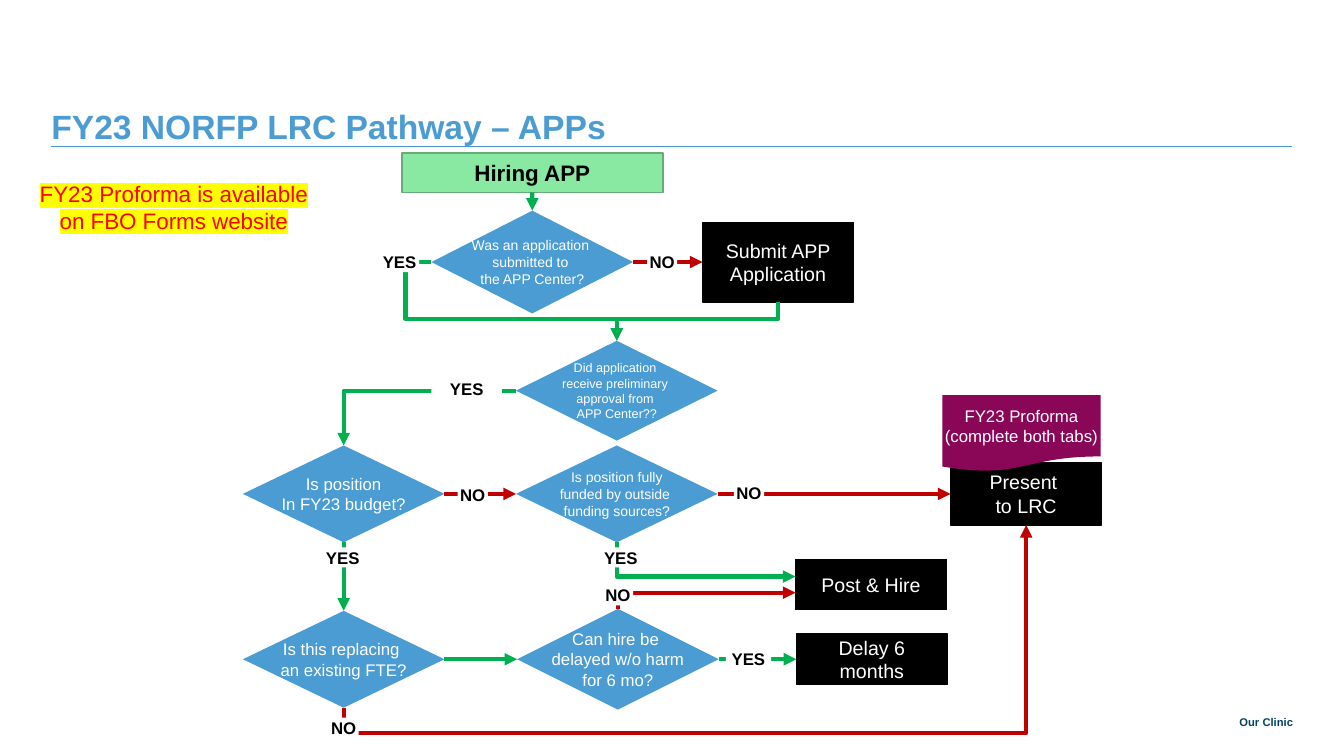
"""Build the APP hiring pathway flowchart slide."""
from dataclasses import dataclass

from lxml.etree import SubElement
from pptx import Presentation
from pptx.dml.color import RGBColor
from pptx.enum.shapes import MSO_CONNECTOR as Link, MSO_SHAPE as Shape
from pptx.enum.text import MSO_ANCHOR as Anchor, PP_ALIGN as Align
from pptx.oxml.ns import qn
from pptx.util import Pt


@dataclass(frozen=True)
class Theme:
    """Colours, font and type sizes."""
    font: str = "Arial"
    blue: str = "4B9CD3"
    navy: str = "004163"
    black: str = "000000"
    white: str = "FFFFFF"
    mint: str = "89E8A2"
    mint_edge: str = "65AC78"
    plum: str = "8A0758"
    yes: str = "00B050"
    no: str = "C00000"
    alert: str = "FF0000"
    marker: str = "FFFF00"
    title: int = 24
    heading: int = 16
    outcome: int = 14
    body: int = 12
    small: int = 10
    tiny: int = 9
    footer: int = 8


T = Theme()

TITLE = "FY23 NORFP LRC Pathway – APPs"
FOOTER = "Our Clinic"
NOTICE = "FY23 Proforma is available on FBO Forms website"
START = ("Hiring APP", (287, 109.4, 186.5, 28.1))
PROFORMA = ("FY23 Proforma\n(complete both tabs)", (673.2, 282.2, 113, 54.7))

DECISION_WIDTH, OUTCOME_WIDTH = 144, 108
DECISIONS = {
    "applied": ("Was an application \nsubmitted to \nthe APP Center?", 308.2, 150.5, 73.4, T.small),
    "approved": ("Did application \nreceive preliminary \napproval from \nAPP Center??", 368.6, 243.4, 71.3, T.tiny),
    "budgeted": ("Is position\nIn FY23 budget?", 173.5, 318.2, 69.2, T.body),
    "funded": ("Is position fully\nfunded by outside \nfunding sources?", 368.6, 318.2, 69.2, T.small),
    "replacing": ("Is this replacing \nan existing FTE?", 173.5, 436.3, 69.2, T.body),
    "delayable": ("Can hire be \ndelayed w/o harm\nfor 6 mo?", 369.4, 434.9, 72, T.body),
}
OUTCOMES = {
    "submit": ("Submit APP Application", 501.8, 158.7, 57),
    "present": ("Present \nto LRC", 679, 330.5, 44.6),
    "post": ("Post & Hire", 568.2, 399.6, 36),
    "delay": ("Delay 6 months", 568.8, 452.9, 36),
}

STRAIGHT = "line"
BEND_1, BEND_2, BEND_3 = (f"bentConnector{n}" for n in (2, 3, 4))
ROUTES = [
    ("start", "bottom", "applied", "top", T.yes, STRAIGHT, (), 0),
    ("applied", "right", "submit", "left", T.no, STRAIGHT, (), 0),
    ("submit", "bottom", "approved", "top", T.yes, BEND_2, (0.44,), 0),
    ("applied", "left", "approved", "top", T.yes, BEND_3, (-0.14, 0.72), 0),
    ("approved", "left", "budgeted", "top", T.yes, BEND_1, (), 0),
    ("budgeted", "right", "funded", "left", T.no, STRAIGHT, (), 0),
    ("budgeted", "bottom", "replacing", "top", T.yes, STRAIGHT, (), 0),
    ("replacing", "right", "delayable", "left", T.yes, STRAIGHT, (), 0),
    ("replacing", "bottom", "present", "bottom", T.no, BEND_2, (-0.14,), 0),
    ("funded", "right", "present", "left", T.no, STRAIGHT, (), 0),
    ("funded", "bottom", "post", "left", T.yes, BEND_1, (), -5.8),
    ("delayable", "top", "post", "left", T.no, BEND_1, (), 5.8),
    ("delayable", "right", "delay", "left", T.yes, STRAIGHT, (), 0),
]

ANSWER_HEIGHT = 14.4
ANSWERS = [
    ("YES", 271.4, 180, 28.1), ("NO", 462.2, 180, 21.6),
    ("YES", 308.2, 270.7, 50.4), ("NO", 326.9, 346.6, 21.6),
    ("NO", 524.2, 345, 21.6), ("YES", 219.6, 391, 50.4),
    ("YES", 429.1, 391, 28.8), ("NO", 430.6, 418, 21.6),
    ("YES", 518.4, 463.7, 32.4), ("NO", 234.7, 512.6, 21.6),
]

SIDES = {"left": (0, 0.5), "right": (1, 0.5), "top": (0.5, 0), "bottom": (0.5, 1)}


def write(shape, text, size, color, bold=False, align=Align.CENTER,
          anchor=Anchor.MIDDLE, wrap=True, insets=None):
    """Fill a shape with formatted text and return its frame."""
    frame = shape.text_frame
    frame.text = text
    frame.word_wrap = wrap
    frame.vertical_anchor = anchor
    if insets:
        (frame.margin_left, frame.margin_top,
         frame.margin_right, frame.margin_bottom) = map(Pt, insets)
    for line in frame.paragraphs:
        line.alignment = align
        for run in line.runs:
            font = run.font
            font.name, font.size, font.bold = T.font, Pt(size), bold
            font.color.rgb = RGBColor.from_string(color)
    return frame


def add_block(slide, kind, box, fill, edge=None):
    """Add a filled preset shape."""
    block = slide.shapes.add_shape(kind, *map(Pt, box))
    block.shadow.inherit = False
    block.fill.solid()
    block.fill.fore_color.rgb = RGBColor.from_string(fill)
    if edge:
        block.line.color.rgb = RGBColor.from_string(edge)
        block.line.width = Pt(1)
    else:
        block.line.fill.background()
    return block


def add_line(slide, begin, end, color, width):
    """Add a plain connector without shadow."""
    line = slide.shapes.add_connector(Link.STRAIGHT, *map(Pt, begin + end))
    line.line.color.rgb = RGBColor.from_string(color)
    line.line.width = Pt(width)
    SubElement(line._element.spPr, qn("a:effectLst"))
    return line


def add_arrow(slide, begin, end, color, preset, bends, upright):
    """Add an arrow, turned a quarter when a bent one leaves vertically."""
    turned = upright and preset != STRAIGHT
    if turned:
        (x1, y1), (x2, y2) = begin, end
        mid_x, mid_y = (x1 + x2) / 2, (y1 + y2) / 2
        half_x, half_y = (y2 - y1) / 2, (x1 - x2) / 2
        begin = (mid_x - half_x, mid_y - half_y)
        end = (mid_x + half_x, mid_y + half_y)
    arrow = add_line(slide, begin, end, color, 3)
    props = arrow._element.spPr
    if turned:
        props.find(qn("a:xfrm")).set("rot", str(90 * 60000))
    outline = props.find(qn("a:prstGeom"))
    outline.set("prst", preset)
    for number, bend in enumerate(bends, 1):
        name = "adj1" if len(bends) == 1 else f"adj{number}"
        SubElement(outline.find(qn("a:avLst")), qn("a:gd"),
                   name=name, fmla=f"val {round(bend * 100000)}")
    SubElement(props.find(qn("a:ln")), qn("a:tailEnd"), type="triangle")


def add_text(slide, box, *args, **kwargs):
    """Add a text box and return its frame."""
    return write(slide.shapes.add_textbox(*map(Pt, box)), *args, **kwargs)


def side_point(box, side):
    """Return the middle of one side of a box."""
    left, top, width, height = box
    across, down = SIDES[side]
    return left + width * across, top + height * down


def main():
    """Draw the slide and save it."""
    deck = Presentation()
    deck.slide_width, deck.slide_height = Pt(960), Pt(540)
    slide = deck.slides.add_slide(deck.slide_layouts[6])

    add_text(slide, (805.7, 504, 118, 16.6), FOOTER, T.footer, T.navy, True,
             Align.RIGHT, Anchor.BOTTOM, insets=(0, 0, 0, 0))
    add_line(slide, (36.7, 104.8), (923, 104.8), T.blue, 0.5)
    title = add_text(slide, (36.7, 27.4, 886.3, 56.9), TITLE, T.title, T.blue, True,
                     Align.LEFT, Anchor.BOTTOM, insets=(0, 68.4, 152.6, 0))
    title.paragraphs[0].line_spacing = Pt(28)

    text, start_box = START
    boxes = {"start": start_box}
    write(add_block(slide, Shape.FLOWCHART_PROCESS, start_box, T.mint, T.mint_edge),
          text, T.heading, T.black, True)
    for key, (text, left, top, height, size) in DECISIONS.items():
        boxes[key] = (left, top, DECISION_WIDTH, height)
        write(add_block(slide, Shape.FLOWCHART_DECISION, boxes[key], T.blue),
              text, size, T.white, wrap=False)
    for key, (text, left, top, height) in OUTCOMES.items():
        boxes[key] = (left, top, OUTCOME_WIDTH, height)
        write(add_block(slide, Shape.FLOWCHART_PROCESS, boxes[key], T.black, T.black),
              text, T.outcome, T.white)

    for source, exit_side, target, entry_side, color, preset, bends, shift in ROUTES:
        x, y = side_point(boxes[target], entry_side)
        add_arrow(slide, side_point(boxes[source], exit_side), (x, y + shift),
                  color, preset, bends, exit_side in ("top", "bottom"))
    for answer, left, top, width in ANSWERS:
        write(add_block(slide, Shape.RECTANGLE, (left, top, width, ANSWER_HEIGHT), T.white),
              answer, T.body, T.black, True, wrap=False)

    text, box = PROFORMA
    write(add_block(slide, Shape.FLOWCHART_DOCUMENT, box, T.plum),
          text, T.body, T.white, wrap=False)
    notice = add_text(slide, (28.1, 123.1, 192.2, 69.1), NOTICE, T.heading, T.alert,
                      anchor=Anchor.TOP, insets=(0, 5.8, 0, 0))
    props = notice.paragraphs[0].runs[0].font._element
    highlight = SubElement(props, qn("a:highlight"))
    SubElement(highlight, qn("a:srgbClr"), val=T.marker)
    props.find(qn("a:solidFill")).addnext(highlight)

    deck.save("out.pptx")


if __name__ == "__main__":
    main()
